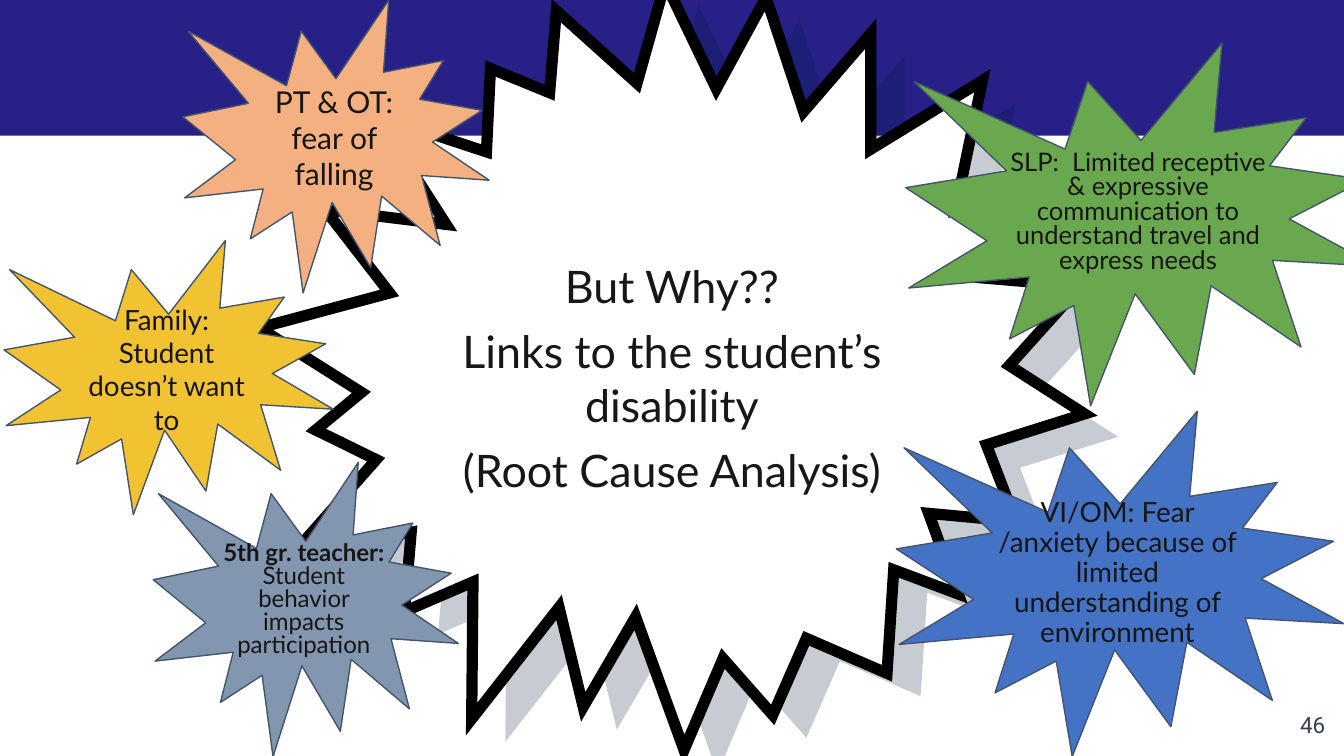
import pptx
import pptx.dml.color
import pptx.enum.shapes
import pptx.enum.text
import pptx.oxml
import pptx.oxml.ns
import pptx.util

Pt = pptx.util.Pt
RGBColor = pptx.dml.color.RGBColor
PP_ALIGN = pptx.enum.text.PP_ALIGN
MSO_ANCHOR = pptx.enum.text.MSO_ANCHOR
MSO_SHAPE = pptx.enum.shapes.MSO_SHAPE

NAVY = RGBColor(0x26, 0x20, 0x87)
WHITE = RGBColor(0xFF, 0xFF, 0xFF)
BLACK = RGBColor(0, 0, 0)
SHADE = RGBColor(0x00, 0x19, 0x36)
TITLE_INK = RGBColor(0x18, 0x17, 0x17)
INK = RGBColor(0x17, 0x16, 0x16)
SLATE = RGBColor(0x44, 0x54, 0x6A)
PAGE_INK = RGBColor(0x33, 0x3F, 0x50)
YELLOW = RGBColor(0xF1, 0xC2, 0x32)
GREEN = RGBColor(0x6A, 0xA8, 0x4F)
PEACH = RGBColor(0xF4, 0xB0, 0x81)
BLUE = RGBColor(0x44, 0x72, 0xC4)
GREY_BLUE = RGBColor(0x82, 0x96, 0xB0)

# Outline of the central burst, in units of 0.72 pt
UNIT = Pt(0.72)
BURST = [
    (409, 69), (414, 8), (474, 62), (495, -13), (533, 66), (570, -2),
    (598, 83), (648, 25), (648, 111), (731, 60), (711, 156), (792, 131),
    (733, 207), (804, 213), (751, 272), (807, 308), (734, 331), (756, 388),
    (691, 382), (713, 442), (665, 424), (660, 501), (600, 475), (575, 532),
    (538, 490), (509, 558), (473, 459), (434, 526), (416, 452), (351, 535),
    (352, 433), (301, 455), (306, 396), (219, 411), (280, 342), (235, 320),
    (269, 292), (193, 244), (290, 218), (242, 156), (332, 167), (280, 86),
    (362, 113), (365, 51),
]
SHADE_SHIFT = (25, 17)

# Left, top, width, height, fill, text size, line spacing, bold lead, text
SEALS = [
    (2.16, 128.88, 176.4, 146.88, YELLOW, 14.9, 1, "",
     "Family: Student doesn’t want to"),
    (485.28, 23.04, 252, 194.4, GREEN, 13.7, 0.8, "",
     "SLP:  Limited receptive & expressive communication to understand "
     "travel and express needs"),
    (97.92, 0, 164.16, 156.96, PEACH, 16.1, 1, "",
     "PT & OT: fear of falling"),
    (480.24, 220.32, 239.76, 185.04, BLUE, 14.9, 0.9, "",
     "VI/OM: Fear /anxiety because of limited understanding of environment"),
    (82.08, 247.68, 163.44, 157.68, GREY_BLUE, 12.9, 0.8, "5th gr. teacher: ",
     "Student behavior impacts participation"),
]


class Deck:
    font = "Lato"
    inset = 7.2

    def __init__(self, slide):
        self.s = slide

    def paint(self, sp, fill, line=None, width=0):
        sp.shadow.inherit = False
        sp.fill.solid()
        sp.fill.fore_color.rgb = fill
        if line is None:
            sp.line.fill.background()
        else:
            sp.line.color.rgb = line
            sp.line.width = Pt(width)

    def frame(self, sp, inset, anchor):
        tf = sp.text_frame
        tf.word_wrap = True
        tf.auto_size = pptx.enum.text.MSO_AUTO_SIZE.NONE
        tf.vertical_anchor = anchor
        tf.margin_left = tf.margin_right = Pt(inset)
        tf.margin_top = tf.margin_bottom = Pt(inset)
        return tf

    def style(self, p, size, color, align=PP_ALIGN.CENTER, font=font):
        p.alignment = align
        for r in p.runs:
            r.font.name = font
            r.font.size = Pt(size)
            r.font.color.rgb = color

    def band(self, x, y, w, h, fill):
        sp = self.s.shapes.add_shape(
            MSO_SHAPE.RECTANGLE, Pt(x), Pt(y), Pt(w), Pt(h))
        self.paint(sp, fill)

    def burst(self, fill, shift=(0, 0), line=None, width=0, alpha=None):
        points = [(x + shift[0], y + shift[1]) for x, y in BURST]
        builder = self.s.shapes.build_freeform(*points[0], scale=UNIT)
        builder.add_line_segments(points[1:], close=True)
        sp = builder.convert_to_shape()
        self.paint(sp, fill, line, width)
        if line is not None:
            miter = pptx.oxml.parse_xml(
                '<a:miter %s lim="800000"/>' % pptx.oxml.ns.nsdecls("a"))
            sp.line._get_or_add_ln().append(miter)
        if alpha is not None:
            clr = sp._element.spPr.find(
                ".//" + pptx.oxml.ns.qn("a:srgbClr"))
            clr.append(pptx.oxml.parse_xml(
                '<a:alpha %s val="%d"/>'
                % (pptx.oxml.ns.nsdecls("a"), alpha * 1000)))

    def title(self, x, y, w, h, lines):
        sp = self.s.shapes.title
        sp.left, sp.top, sp.width, sp.height = Pt(x), Pt(y), Pt(w), Pt(h)
        tf = self.frame(sp, self.inset, MSO_ANCHOR.MIDDLE)
        tf.text = "\n".join(lines)
        for i, p in enumerate(tf.paragraphs):
            p.space_before = Pt(6 if i else 0)
            self.style(p, 24, TITLE_INK)
        # Bring the title in front of the burst
        self.s.shapes._spTree.append(sp._element)

    def seal(self, x, y, w, h, fill, size, spacing, lead, text):
        sp = self.s.shapes.add_shape(
            MSO_SHAPE.EXPLOSION1, Pt(x), Pt(y), Pt(w), Pt(h))
        self.paint(sp, fill, SLATE, 0.75)
        p = self.frame(sp, 0, MSO_ANCHOR.MIDDLE).paragraphs[0]
        p.text = lead or text
        if lead:
            p.runs[0].font.bold = True
            p.add_run().text = text
        p.line_spacing = spacing
        self.style(p, size, INK)

    def page_number(self, x, y, w, h, text):
        sp = self.s.shapes.add_textbox(Pt(x), Pt(y), Pt(w), Pt(h))
        tf = self.frame(sp, self.inset, MSO_ANCHOR.TOP)
        tf.text = text
        self.style(tf.paragraphs[0], 12, PAGE_INK, PP_ALIGN.RIGHT, "Roboto")


def main():
    prs = pptx.Presentation()
    prs.slide_width, prs.slide_height = Pt(720), Pt(405)
    deck = Deck(prs.slides.add_slide(prs.slide_layouts[5]))

    # Backdrop
    deck.band(-0.72, 0, 720.72, 72.72, NAVY)
    deck.burst(SHADE, shift=SHADE_SHIFT, alpha=22)
    deck.burst(WHITE, line=BLACK, width=6)

    # Central question
    deck.title(228.96, 169.92, 262.08, 64.8, [
        "But Why??",
        "Links to the student’s disability",
        "(Root Cause Analysis)",
    ])

    # Views of the team members
    for seal in SEALS:
        deck.seal(*seal)

    deck.page_number(673.92, 373.68, 43.2, 30.96, "46")
    prs.save("out.pptx")


if __name__ == "__main__":
    main()
